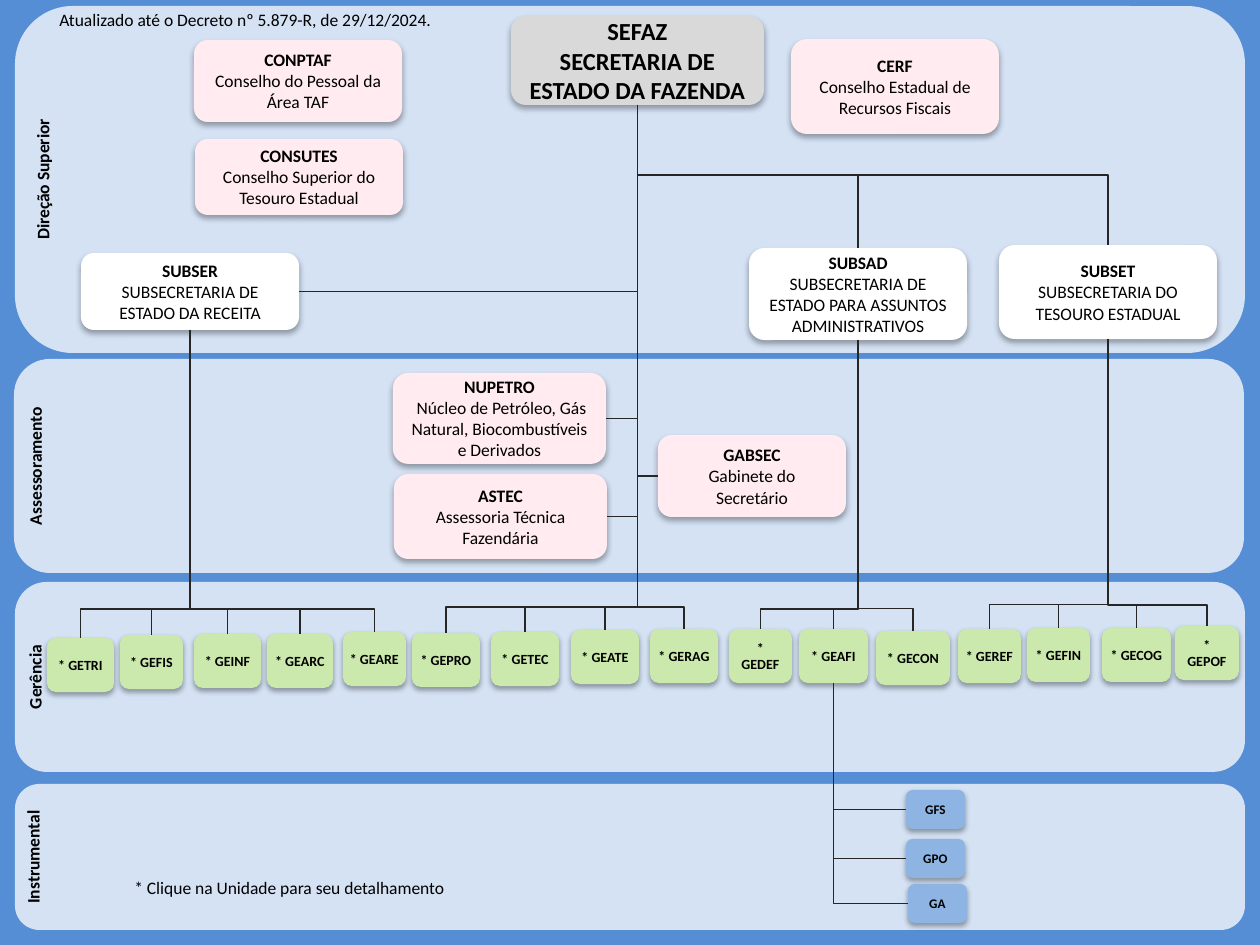
from pptx import Presentation
from pptx.dml.color import RGBColor
from pptx.enum.shapes import MSO_CONNECTOR, MSO_SHAPE
from pptx.enum.text import MSO_ANCHOR, PP_ALIGN
from pptx.oxml.ns import qn
from pptx.util import Emu, Pt
from lxml import etree

ELBOW = MSO_CONNECTOR.ELBOW
ROUND = MSO_SHAPE.ROUNDED_RECTANGLE
TOP, MIDDLE = MSO_ANCHOR.TOP, MSO_ANCHOR.MIDDLE
LEFT, CENTER = PP_ALIGN.LEFT, PP_ALIGN.CENTER
SIDE_TOP, SIDE_LEFT, SIDE_BOTTOM, SIDE_RIGHT = range(4)
BLANK = 6

SCALE = 914400 // 126  # EMU per px
COLORS = {
    "back": "558ED5", "panel": "D4E2F4", "head": "D9D9D9", "council": "FFEBF0",
    "under": "FFFFFF", "manager": "CCE9AD", "support": "8EB4E3",
    "text": "000000", "line": "262626",
}
BIG_SHADOW, SMALL_SHADOW = (32, 3.5, 2.2), (35, 3.1, 1.8)  # opacity, blur, distance


def px(n):
    return Emu(int(n * SCALE))


def rgb(name):
    return RGBColor.from_string(COLORS[name])


class Chart:
    font = "Calibri"

    def __init__(self, prs):
        self.s = prs.slides.add_slide(prs.slide_layouts[BLANK])
        self.s.background.fill.solid()
        self.s.background.fill.fore_color.rgb = rgb("back")
        self.boxes = {}

    def set_text(self, tf, lines, size, align=CENTER, bold_lines=1, **frame):
        for key, value in frame.items():
            setattr(tf, key, value)
        for i, line in enumerate(lines):
            p = tf.paragraphs[0] if i == 0 else tf.add_paragraph()
            p.alignment = align
            r = p.add_run()
            r.text = line
            style = {"name": self.font, "size": Pt(size), "bold": i < bold_lines}
            for key, value in style.items():
                setattr(r.font, key, value)
            r.font.color.rgb = rgb("text")

    def round_box(self, x, y, w, h, color):
        sp = self.s.shapes.add_shape(ROUND, px(x), px(y), px(w), px(h))
        sp.shadow.inherit = False
        sp.fill.solid()
        sp.fill.fore_color.rgb = rgb(color)
        sp.line.fill.background()
        return sp

    def panel(self, label, x, y, w, h):
        sp = self.round_box(x, y, w, h, "panel")
        self.set_text(sp.text_frame, [label], 10, vertical_anchor=TOP,
                      word_wrap=True, margin_left=0)
        sp.text_frame._txBody.bodyPr.set("vert", "vert270")

    def unit(self, lines, x, y, w, h, color, size=10, inset=13,
             shadow=BIG_SHADOW, bold_lines=1):
        sp = self.round_box(x, y, w, h, color)
        self.add_shadow(sp, *shadow)
        self.set_text(sp.text_frame, lines, size, bold_lines=bold_lines,
                      vertical_anchor=MIDDLE, word_wrap=True,
                      margin_left=px(inset), margin_right=px(inset))
        self.boxes[lines[0].strip("* ")] = sp

    def add_shadow(self, sp, opacity, blur, distance):
        effects = sp._element.spPr.find(qn("a:effectLst"))
        shadow = etree.SubElement(effects, qn("a:outerShdw"), {
            "blurRad": str(int(Pt(blur))), "dist": str(int(Pt(distance))),
            "dir": "5400000", "rotWithShape": "0"})
        color = etree.SubElement(shadow, qn("a:srgbClr"), val=COLORS["text"])
        etree.SubElement(color, qn("a:alpha"), val=str(opacity * 1000))

    def elbow(self, parent, child, side=SIDE_TOP, bus=None):
        """Go down from the parent, then across to a side of the child."""
        a, b = self.boxes[parent], self.boxes[child]
        x1, y1 = a.left + a.width // 2, a.top + a.height
        x2, y2 = {
            SIDE_TOP: (b.left + b.width // 2, b.top),
            SIDE_LEFT: (b.left, b.top + b.height // 2),
            SIDE_RIGHT: (b.left + b.width, b.top + b.height // 2),
        }[side]
        c = self.s.shapes.add_connector(ELBOW, x1, y1, x2, y2)
        c.begin_connect(a, SIDE_BOTTOM)
        c.end_connect(b, side)
        c.line.color.rgb = rgb("line")
        c.line.width = Pt(0.75)

        # The frame lies on its side: its length runs down the slide
        length, span = y2 - y1, abs(x2 - x1)
        frame = {"left": (x1 + x2 - length) // 2, "top": (y1 + y2 - span) // 2,
                 "width": length, "height": span}
        for key, value in frame.items():
            setattr(c, key, Emu(value))
        spPr = c._element.spPr
        xfrm = spPr.find(qn("a:xfrm"))
        xfrm.attrib.pop("flipV", None)
        xfrm.set("flipH", "1" if x2 > x1 else "0")
        xfrm.set("rot", "16200000" if x2 > x1 else "5400000")
        geom = spPr.find(qn("a:prstGeom"))
        if bus is None:
            geom.set("prst", "bentConnector2")
        else:
            ratio = round((px(bus) - y1) / length * 100000)
            etree.SubElement(geom.find(qn("a:avLst")), qn("a:gd"),
                             name="adj1", fmla=f"val {ratio}")
        etree.SubElement(spPr, qn("a:effectLst"))

    def note(self, text, x, y, w, h):
        tb = self.s.shapes.add_textbox(px(x), px(y), px(w), px(h))
        self.set_text(tb.text_frame, [text], 10, LEFT, bold_lines=0, word_wrap=False)


PANELS = [
    ("Gerência", 15, 582, 1230, 190),
    ("Instrumental", 15, 784, 1230, 146),
    ("Assessoramento", 14, 359, 1230, 214),
    ("Direção Superior", 15, 6, 1230, 347),
]
UNITS = [
    (["CERF", "Conselho Estadual de Recursos Fiscais"], 791, 39, 208, 95, "council"),
    (["CONPTAF", "Conselho do Pessoal da Área TAF"], 194, 40, 208, 82, "council"),
    (["CONSUTES", "Conselho Superior do Tesouro Estadual"], 195, 139, 208, 76, "council"),
    (["NUPETRO", " Núcleo de Petróleo, Gás Natural, Biocombustíveis e Derivados"],
     393, 373, 213, 91, "council"),
    (["ASTEC", "Assessoria Técnica Fazendária"], 394, 474, 213, 85, "council"),
    (["GABSEC", "Gabinete do Secretário"], 658, 435, 188, 82, "council"),
    (["SUBSER", "SUBSECRETARIA DE", "ESTADO DA RECEITA"], 81, 253, 218, 77, "under"),
    (["SUBSAD", "SUBSECRETARIA DE ESTADO PARA ASSUNTOS ADMINISTRATIVOS"],
     749, 248, 218, 92, "under"),
    (["SUBSET", "SUBSECRETARIA DO", "TESOURO ESTADUAL"], 999, 245, 218, 94, "under"),
]
# Parent: height of the shared line, then name, x, y, width, inset of each unit
MANAGERS = {
    "SUBSER": (609, [("GETRI", 47, 638, 67, 5), ("GEFIS", 120, 635, 63, 5),
                     ("GEINF", 194, 634, 67, 0), ("GEARC", 267, 634, 66, 5),
                     ("GEARE", 343, 632, 63, 0)]),
    "SEFAZ": (607, [("GEPRO", 412, 633, 68, 5), ("GETEC", 491, 632, 68, 5),
                    ("GEATE", 571, 630, 68, 5), ("GERAG", 650, 629, 68, 5)]),
    "SUBSAD": (609, [("GEDEF", 729, 629, 63, 5), ("GEAFI", 799, 629, 69, 5),
                     ("GECON", 876, 631, 74, 5)]),
    "SUBSET": (605, [("GEREF", 958, 629, 63, 5), ("GEFIN", 1027, 628, 63, 5),
                     ("GECOG", 1102, 628, 69, 5), ("GEPOF", 1175, 626, 64, 5)]),
}
SUPPORT = [("GFS", 906, 790), ("GPO", 906, 839), ("GA", 908, 884)]


def main():
    prs = Presentation()
    prs.slide_width, prs.slide_height = px(1260), px(945)
    chart = Chart(prs)

    # Level panels
    for panel in PANELS:
        chart.panel(*panel)

    # Secretariat, councils and undersecretariats
    chart.unit(["SEFAZ", "SECRETARIA DE ESTADO DA FAZENDA"], 511, 16, 253, 89,
               "head", size=14, bold_lines=2)
    for unit in UNITS:
        chart.unit(*unit)
    for name, side in [("NUPETRO", SIDE_RIGHT), ("ASTEC", SIDE_RIGHT),
                       ("SUBSER", SIDE_RIGHT), ("GABSEC", SIDE_LEFT)]:
        chart.elbow("SEFAZ", name, side)
    for name in ("SUBSAD", "SUBSET"):
        chart.elbow("SEFAZ", name, bus=175)

    # Management units under each parent
    for parent, (bus, managers) in MANAGERS.items():
        for name, x, y, w, inset in managers:
            chart.unit([f"* {name}"], x, y, w, 54, "manager", 8, inset, SMALL_SHADOW)
            chart.elbow(parent, name, bus=bus)

    # Support units
    for name, x, y in SUPPORT:
        chart.unit([name], x, y, 59, 39, "support", 7.5, shadow=SMALL_SHADOW)
        chart.elbow("GEAFI", name, SIDE_LEFT)

    # Notes
    chart.note("Atualizado até o Decreto nº 5.879-R, de 29/12/2024.", 47, 3, 404, 34)
    chart.note("* Clique na Unidade para seu detalhamento", 122, 871, 344, 34)

    prs.save("out.pptx")


if __name__ == "__main__":
    main()
